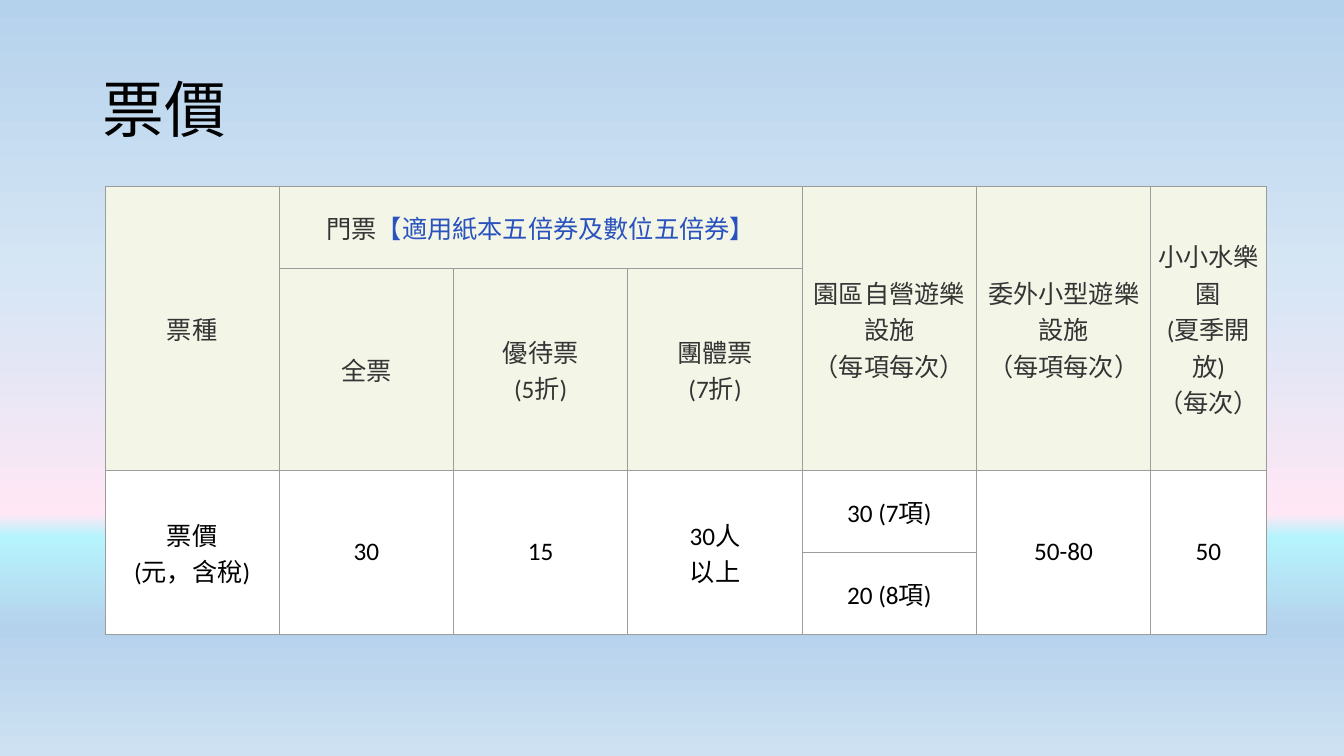
from copy import deepcopy

from lxml import etree
from pptx import Presentation
from pptx.dml.color import RGBColor
from pptx.enum.text import MSO_ANCHOR, PP_ALIGN
from pptx.oxml.ns import qn
from pptx.util import Pt

PX = 9525
MIDDLE = MSO_ANCHOR.MIDDLE
LEFT, CENTER = PP_ALIGN.LEFT, PP_ALIGN.CENTER
FONT = "Calibri"
BLACK = RGBColor(0x00, 0x00, 0x00)
WHITE = RGBColor(0xFF, 0xFF, 0xFF)
GREY = RGBColor(0x34, 0x34, 0x34)
BLUE = RGBColor(0x2A, 0x52, 0xBE)
CREAM = RGBColor(0xF3, 0xF6, 0xE7)
BORDER = RGBColor(0x9C, 0x9C, 0x9C)
SKY = RGBColor(0xB5, 0xD2, 0xEC)
PALE = RGBColor(0xD6, 0xE6, 0xF5)
PINK = RGBColor(0xFF, 0xE7, 0xF5)
CYAN = RGBColor(0xB5, 0xF4, 0xFD)
MIST = RGBColor(0xCE, 0xE1, 0xF2)

GRADIENT = [(0, SKY), (0.37, PALE), (0.68, PINK), (0.71, CYAN), (0.83, SKY), (1, MIST)]
COL_WIDTHS = [166] * 6 + [110]
ROW_HEIGHTS = [78, 192, 78, 78]
HEADER_ROWS = 2
VOUCHER_NOTE = "【適用紙本五倍券及數位五倍券】"
TICKETS = [
    ["票種", "門票", "", "", "園區自營遊樂設施\n（每項每次）",
     "委外小型遊樂設施\n（每項每次）", "小小水樂園\n(夏季開放)\n（每次）"],
    ["", "全票", "優待票\n(5折)", "團體票\n(7折)", "", "", ""],
    ["票價\n(元，含稅)", "30", "15", "30人\n以上", "30 (7項)", "50-80", "50"],
    ["", "", "", "", "20 (8項)", "", ""],
]
TALL_CELLS = [(0, 0), (0, 4), (0, 5), (0, 6)] + [(2, c) for c in (0, 1, 2, 3, 5, 6)]


def paint_background(s):
    """Fill the slide background with the vertical sky gradient."""
    fill = s.background.fill
    fill.gradient()
    fill.gradient_angle = 270
    stops = next(s.element.iter(qn("a:gsLst")))
    while len(stops) < len(GRADIENT):
        stops.append(deepcopy(stops[-1]))
    for stop, (position, color) in zip(fill.gradient_stops, GRADIENT):
        stop.position = position
        stop.color.rgb = color


def add_title(s, text, x, y, w, h):
    """Place and format the title placeholder in the given box."""
    title = s.shapes.title
    title.left, title.top, title.width, title.height = (v * PX for v in (x, y, w, h))
    tf = title.text_frame
    tf.text = text
    tf.vertical_anchor = MIDDLE
    p = tf.paragraphs[0]
    p.alignment = LEFT
    p.line_spacing = 0.9
    p.font.name, p.font.size = FONT, Pt(44)
    p.font.color.rgb = BLACK


def add_borders(cell):
    """Draw a thin line on all four sides of a cell."""
    tc_pr = cell._tc.get_or_add_tcPr()
    for side in ("lnL", "lnR", "lnT", "lnB"):
        ln = etree.SubElement(tc_pr, qn(f"a:{side}"), w=str(Pt(0.75)))
        solid = etree.SubElement(ln, qn("a:solidFill"))
        etree.SubElement(solid, qn("a:srgbClr"), val=str(BORDER))


def format_cell(cell, text, fill, color):
    """Give a cell its borders, fill and centred text."""
    add_borders(cell)
    cell.fill.solid()
    cell.fill.fore_color.rgb = fill
    cell.vertical_anchor = MIDDLE
    cell.margin_left = cell.margin_right = 3 * PX
    cell.margin_top = cell.margin_bottom = 3 * PX
    p = cell.text_frame.paragraphs[0]
    p.text = text
    p.alignment = CENTER
    p.font.name, p.font.size = FONT, Pt(18)
    p.font.color.rgb = color


def add_price_table(s, x, y):
    """Build the ticket price table with its top left corner at x, y."""
    w, h = sum(COL_WIDTHS), sum(ROW_HEIGHTS)
    frame = s.shapes.add_table(len(ROW_HEIGHTS), len(COL_WIDTHS),
                               x * PX, y * PX, w * PX, h * PX)
    table = frame.table
    table.first_row = table.horz_banding = False
    for column, width in zip(table.columns, COL_WIDTHS):
        column.width = width * PX
    for row, height in zip(table.rows, ROW_HEIGHTS):
        row.height = height * PX
    for r, texts in enumerate(TICKETS):
        fill, color = (CREAM, GREY) if r < HEADER_ROWS else (WHITE, BLACK)
        for c, text in enumerate(texts):
            format_cell(table.cell(r, c), text, fill, color)
    note = table.cell(0, 1).text_frame.paragraphs[0].add_run()
    note.text = VOUCHER_NOTE
    note.font.color.rgb = BLUE
    table.cell(0, 1).merge(table.cell(0, 3))
    for r, c in TALL_CELLS:
        table.cell(r, c).merge(table.cell(r + 1, c))


def main():
    """Build the ticket price slide and save it."""
    prs = Presentation()
    prs.slide_width, prs.slide_height = 1280 * PX, 720 * PX
    s = prs.slides.add_slide(prs.slide_layouts[5])
    paint_background(s)
    add_title(s, "票價", 88, 38, 1104, 139)
    add_price_table(s, 100, 178)
    prs.save("out.pptx")


if __name__ == "__main__":
    main()
